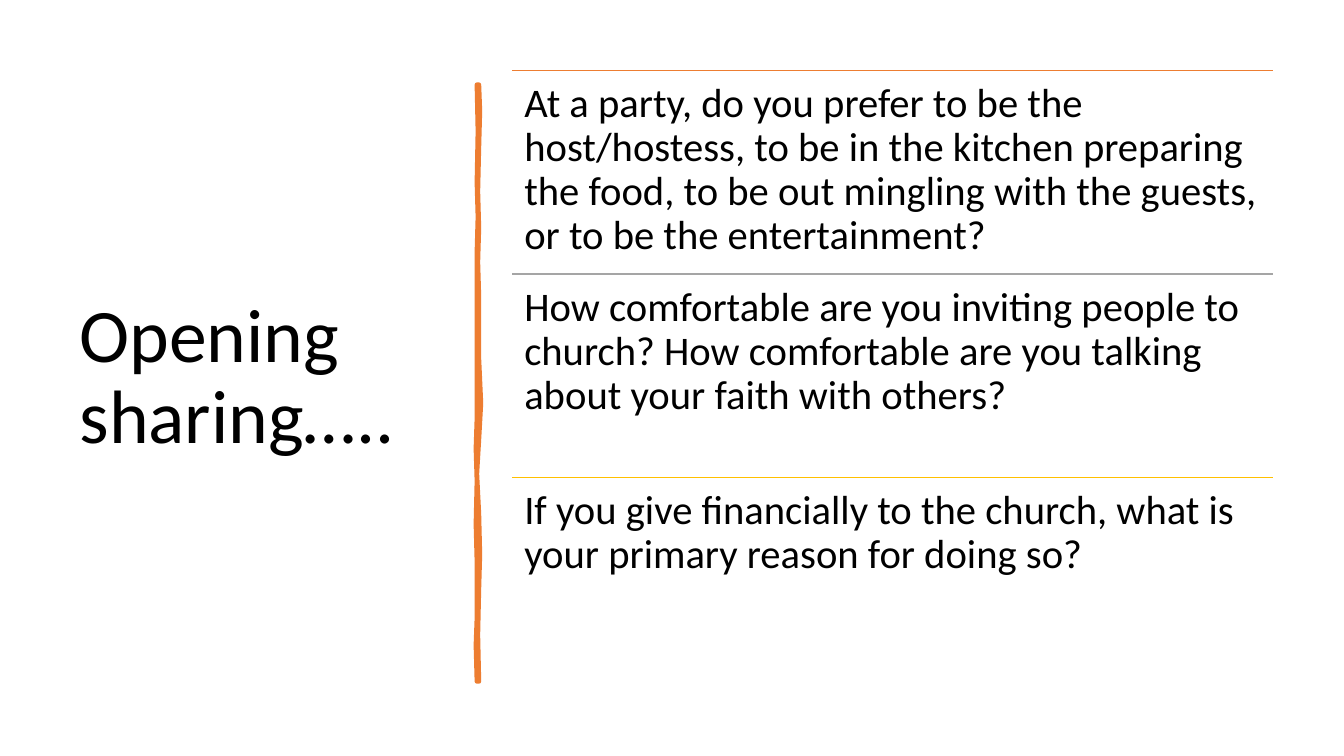
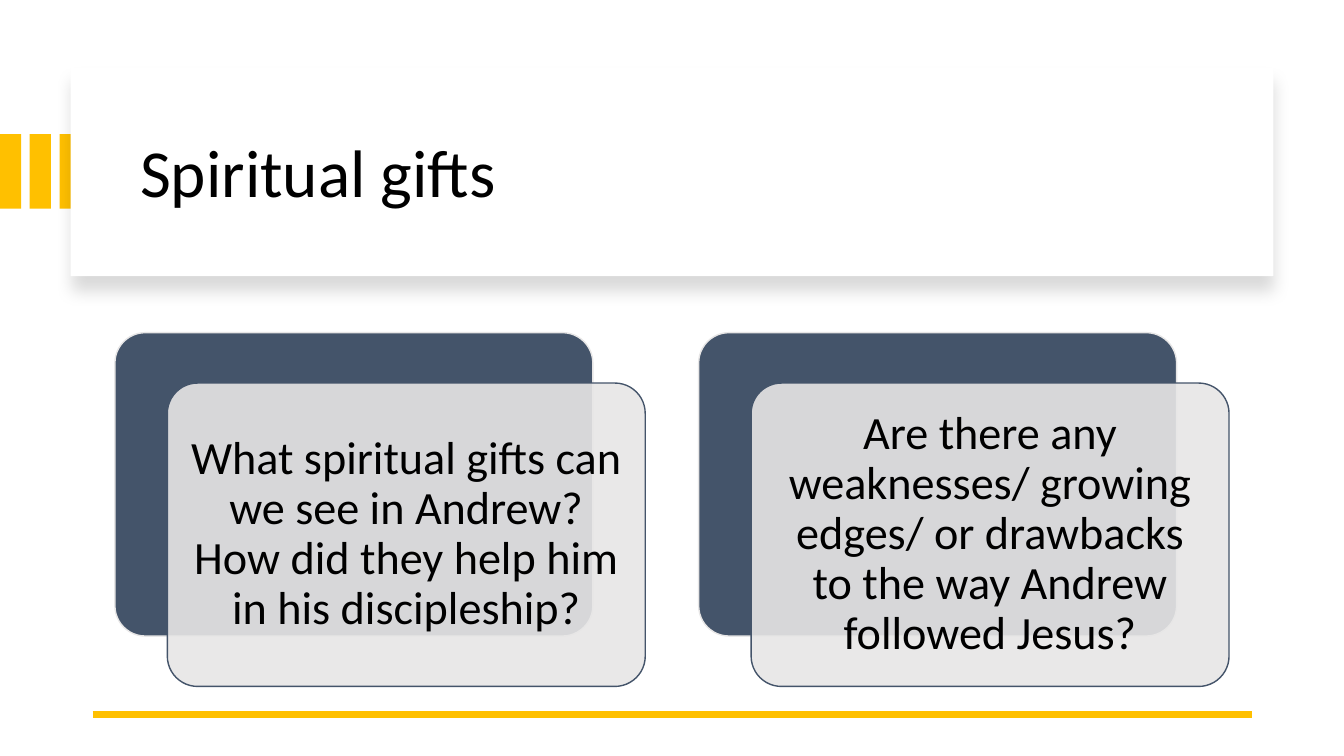
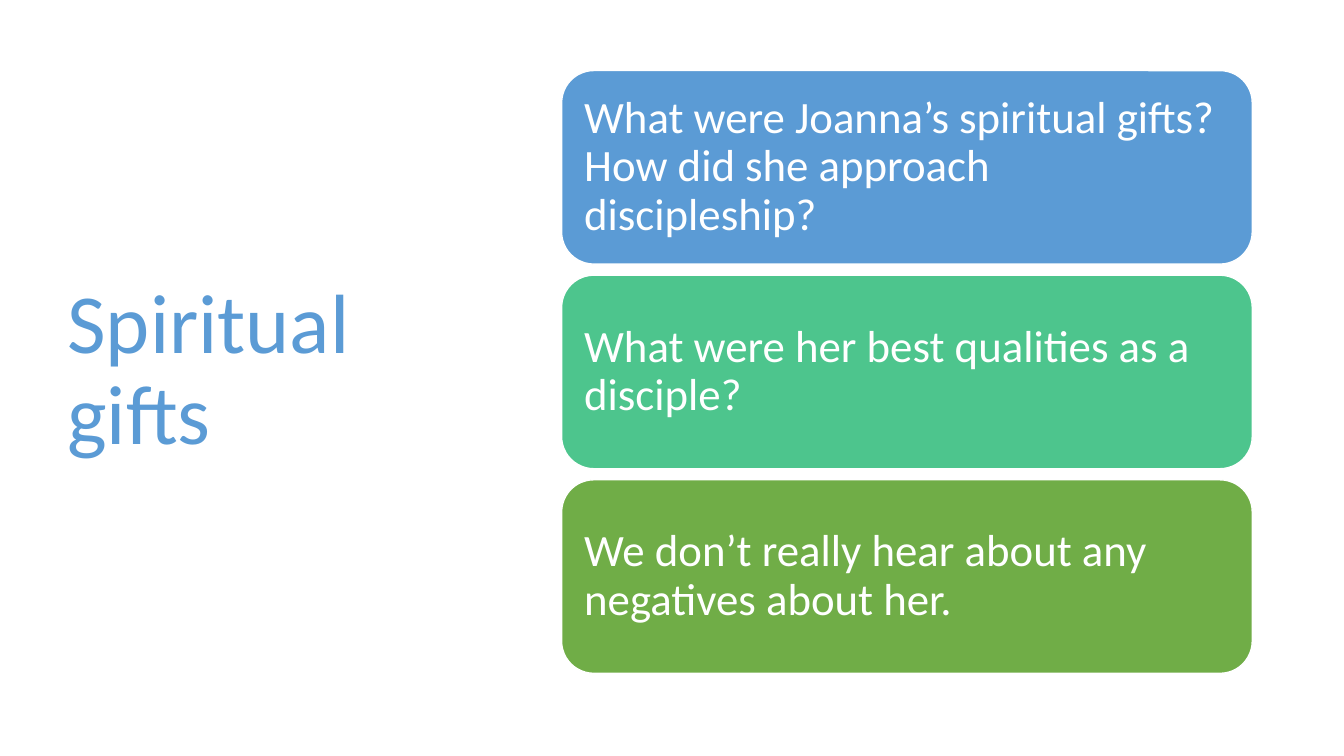
from lxml import etree
from pptx import Presentation
from pptx.dml.color import RGBColor
from pptx.enum.shapes import MSO_CONNECTOR, MSO_SHAPE
from pptx.enum.text import MSO_ANCHOR, PP_ALIGN
from pptx.oxml.ns import qn
from pptx.util import Inches, Pt

RECT, ROUND = MSO_SHAPE.RECTANGLE, MSO_SHAPE.ROUNDED_RECTANGLE
STRAIGHT = MSO_CONNECTOR.STRAIGHT
TOP, MIDDLE = MSO_ANCHOR.TOP, MSO_ANCHOR.MIDDLE
LEFT, CENTER = PP_ALIGN.LEFT, PP_ALIGN.CENTER

FONT = "Calibri"
BLACK = RGBColor(0x00, 0x00, 0x00)
WHITE = RGBColor(0xFF, 0xFF, 0xFF)
ORANGE = RGBColor(0xED, 0x7D, 0x31)
GRAY = RGBColor(0xA5, 0xA5, 0xA5)
GOLD = RGBColor(0xFF, 0xC0, 0x00)
NAVY = RGBColor(0x44, 0x54, 0x6A)
PALE = RGBColor(0xE7, 0xE6, 0xE6)
BLUE = RGBColor(0x5B, 0x9B, 0xD5)
TEAL = RGBColor(0x4D, 0xC5, 0x8D)
GREEN = RGBColor(0x70, 0xAD, 0x47)

# Content
SHARING_TITLE = "Opening sharing….."
SHARING = [
    (ORANGE, "At a party, do you prefer to be the host/hostess, to be in the "
             "kitchen preparing the food, to be out mingling with the guests, "
             "or to be the entertainment?"),
    (GRAY, "How comfortable are you inviting people to church? How comfortable "
           "are you talking about your faith with others?"),
    (GOLD, "If you give financially to the church, what is your primary reason "
           "for doing so?"),
]
GIFTS_TITLE = "Spiritual gifts"
ANDREW = [
    "What spiritual gifts can we see in Andrew? How did they help him in his "
    "discipleship?",
    "Are there any weaknesses/ growing edges/ or drawbacks to the way Andrew "
    "followed Jesus?",
]
JOANNA = [
    (BLUE, "What were Joanna’s spiritual gifts? How did she approach discipleship?"),
    (TEAL, "What were her best qualities as a disciple?"),
    (GREEN, "We don’t really hear about any negatives about her."),
]

# Edges of the hand-drawn divider: right side down, left side back up
DIVIDER = [
    (4.75, 0.84), (4.76, 1.1), (4.75, 1.46), (4.74, 1.9), (4.75, 2.26),
    (4.74, 2.6), (4.75, 2.94), (4.75, 3.56), (4.77, 4.0), (4.75, 4.36),
    (4.73, 4.7), (4.75, 5.1), (4.76, 5.5), (4.75, 5.84), (4.74, 6.3),
    (4.75, 6.76), (4.73, 6.76), (4.72, 6.4), (4.73, 6.13), (4.73, 5.57),
    (4.72, 5.2), (4.73, 4.77), (4.72, 4.45), (4.73, 4.15), (4.73, 2.5),
    (4.74, 2.15), (4.73, 1.81), (4.74, 1.3), (4.73, 0.84),
]


def write(shape, text, size, color=BLACK, anchor=MIDDLE, align=LEFT, inset=None):
    tf = shape.text_frame
    tf.word_wrap = True
    tf.vertical_anchor = anchor
    if inset is not None:
        for side in ("left", "top", "right", "bottom"):
            setattr(tf, f"margin_{side}", Inches(inset))
    p = tf.paragraphs[0]
    p.alignment, p.line_spacing = align, 0.9
    r = p.add_run()
    r.text = text
    for name, value in {"name": FONT, "size": Pt(size)}.items():
        setattr(r.font, name, value)
    r.font.color.rgb = color


def add_text(s, box, text, size, **fmt):
    tb = s.shapes.add_textbox(*map(Inches, box))
    write(tb, text, size, **fmt)
    return tb


def paint(shape, fill, line=None, width=1):
    shape.shadow.inherit = False
    shape.fill.solid()
    shape.fill.fore_color.rgb = fill
    if line is None:
        shape.line.fill.background()
    else:
        shape.line.color.rgb = line
        shape.line.width = Pt(width)


def add_box(s, kind, box, fill, line=None, adj=None):
    sp = s.shapes.add_shape(kind, *map(Inches, box))
    paint(sp, fill, line)
    if adj is not None:
        sp.adjustments[0] = adj
    return sp


def add_rule(s, x1, x2, y, color, width):
    ln = s.shapes.add_connector(STRAIGHT, *map(Inches, (x1, y, x2, y)))
    ln.line.color.rgb = color
    ln.line.width = Pt(width)
    etree.SubElement(ln._element.spPr, qn("a:effectLst"))


def set_alpha(color_element, percent):
    etree.SubElement(color_element, qn("a:alpha"), val=str(percent * 1000))


def add_soft_shadow(sp, alpha, blur, dist):
    effects = sp._element.spPr.find(qn("a:effectLst"))
    shadow = etree.SubElement(effects, qn("a:outerShdw"), blurRad=str(Pt(blur)),
                              dist=str(Pt(dist)), dir="5400000", algn="t",
                              rotWithShape="0")
    set_alpha(etree.SubElement(shadow, qn("a:srgbClr"), val=str(BLACK)), alpha)


def sharing_slide(s):
    add_text(s, (0.69, 0.7, 3.74, 6.11), SHARING_TITLE, 54)
    # Divider
    points = [(Inches(x), Inches(y)) for x, y in DIVIDER]
    builder = s.shapes.build_freeform(*points[0])
    builder.add_line_segments(points[1:], close=True)
    paint(builder.convert_to_shape(), ORANGE, ORANGE, 3.25)
    # Ruled questions
    left, top, width, height = 5.08, 0.7, 7.55, 2.02
    for i, (color, text) in enumerate(SHARING):
        y = top + i * height
        add_rule(s, left, left + width, y, color, 1)
        add_text(s, (left, y, width, height), text, 29, anchor=TOP, inset=0.12)


def andrew_slide(s):
    # Stripes running under the title panel
    for i in range(3):
        add_box(s, RECT, (i * 0.295, 1.33, 0.21, 0.74), GOLD)
    panel = add_box(s, RECT, (0.7, 0.67, 11.93, 2.07), WHITE)
    add_soft_shadow(panel, alpha=15, blur=11, dist=10)
    title = add_text(s, (1.14, 0.89, 11.13, 1.7), GIFTS_TITLE, 48)
    title.text_frame.margin_left = Inches(0.25)
    add_rule(s, 0.92, 12.42, 7.09, GOLD, 4.5)
    # Cards: dark back, translucent front
    left, top, width, height, pitch = 1.14, 3.3, 4.74, 3.01, 5.79
    for i, text in enumerate(ANDREW):
        x = left + i * pitch
        add_box(s, ROUND, (x, top, width, height), NAVY, PALE, 0.1)
        front = add_box(s, ROUND, (x + 0.52, top + 0.5, width, height), PALE, NAVY, 0.1)
        set_alpha(front._element.spPr.find(qn("a:solidFill"))[0], 90)
        write(front, text, 33, align=CENTER, inset=0.14)


def joanna_slide(s):
    add_text(s, (0.57, 0.68, 4.16, 6.02), GIFTS_TITLE, 60, color=BLUE)
    top, height, gap = 0.7, 1.92, 0.11
    for i, (color, text) in enumerate(JOANNA):
        y = top + i * (height + gap)
        card = add_box(s, ROUND, (5.57, y, 6.85, height), color, WHITE)
        write(card, text, 32, color=WHITE, inset=0.13)


def main():
    prs = Presentation()
    prs.slide_width, prs.slide_height = Inches(13.33), Inches(7.5)
    for build in (sharing_slide, andrew_slide, joanna_slide):
        build(prs.slides.add_slide(prs.slide_layouts[6]))
    prs.save("out.pptx")


if __name__ == "__main__":
    main()
